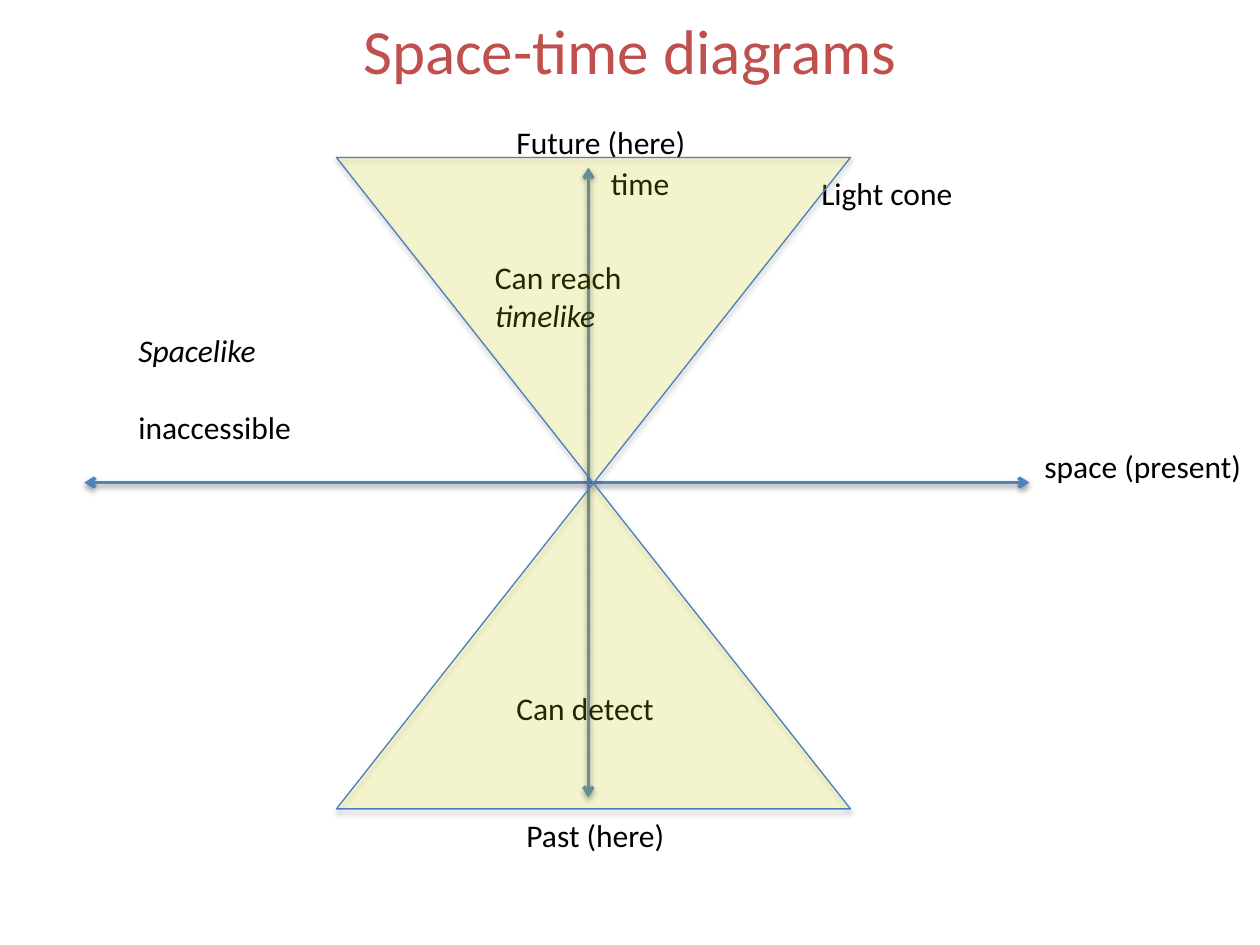
"""Build a slide showing a light cone on space and time axes."""
from lxml.etree import SubElement as Sub
from pptx import Presentation
from pptx.dml.color import RGBColor
from pptx.enum.shapes import MSO_CONNECTOR as Conn, MSO_SHAPE as Shape
from pptx.enum.text import MSO_ANCHOR as Anchor, PP_ALIGN as Align
from pptx.oxml.ns import qn
from pptx.util import Inches, Pt

RED = RGBColor(0xC0, 0x50, 0x4D)
BLUE = RGBColor(0x4F, 0x81, 0xBD)
EDGE = RGBColor(0x4B, 0x7E, 0xBC)
YELLOW = RGBColor(0xFF, 0xFF, 0x00)
BLACK = RGBColor(0x00, 0x00, 0x00)

deck = Presentation()
deck.slide_width, deck.slide_height = Inches(10), Inches(7.5)
slide = deck.slides.add_slide(deck.slide_layouts[6])


def add_text(box, lines, size=18, color=BLACK):
    left, top, width, height = box
    frame = slide.shapes.add_textbox(
        Inches(left), Inches(top), Inches(width), Inches(height)).text_frame
    frame.word_wrap = True
    for i, (text, slant, gap) in enumerate(lines):
        para = frame.paragraphs[0] if i == 0 else frame.add_paragraph()
        para.space_before = Pt(gap)
        run = para.add_run()
        run.text = text
        font = run.font
        font.name, font.size, font.italic = "Calibri", Pt(size), slant
        font.color.rgb = color
    return frame


def add_shadow(shape, alpha, dist):
    effects = Sub(shape._element.spPr, qn("a:effectLst"))
    shadow = Sub(effects, qn("a:outerShdw"), blurRad=str(Pt(3.1)),
                 dist=str(Pt(dist)), dir="5400000", rotWithShape="0")
    tint = Sub(shadow, qn("a:srgbClr"), val=str(BLACK))
    Sub(tint, qn("a:alpha"), val=str(alpha * 1000))


title = add_text((0.5, 0.08, 9, 0.62),
                 [("Space-time diagrams", False, 0)], 36, RED)
title.vertical_anchor = Anchor.MIDDLE
title.paragraphs[0].alignment = Align.CENTER

for ends in [(0.67, 3.83, 8.17, 3.83), (4.67, 1.33, 4.67, 6.33)]:
    axis = slide.shapes.add_connector(
        Conn.STRAIGHT, *[Inches(n) for n in ends])
    axis.line.color.rgb = BLUE
    axis.line.width = Pt(2)
    stroke = axis.line._get_or_add_ln()
    for tag in ("a:headEnd", "a:tailEnd"):
        Sub(stroke, qn(tag), type="arrow")
    add_shadow(axis, 38, 1.6)

labels = [
    ((8.19, 3.5, 1.81, 0.4), [("space (present)", False, 0)]),
    ((4, 0.93, 2.25, 0.4), [("Future (here)", False, 0)]),
    ((4.75, 1.25, 2.08, 0.4), [("time", False, 0)]),
    ((4.08, 6.43, 1.33, 0.4), [("Past (here)", False, 0)]),
    ((6.42, 1.33, 1.67, 0.4), [("Light cone", False, 0)]),
    ((3.83, 2, 1.67, 0.71),
     [("Can reach", False, 0), ("timelike", True, 0)]),
    ((4, 5.42, 1.42, 0.4), [("Can detect", False, 0)]),
    ((1, 2.58, 1.75, 1.01),
     [("Spacelike", True, 0), ("inaccessible", False, 22)]),
]
for box, lines in labels:
    add_text(box, lines)

cone = slide.shapes.add_shape(
    Shape.FLOWCHART_COLLATE,
    Inches(2.67), Inches(1.25), Inches(4.08), Inches(5.17))
cone.fill.solid()
cone.fill.fore_color.rgb = YELLOW
tint = cone._element.spPr.find(qn("a:solidFill")).find(qn("a:srgbClr"))
Sub(tint, qn("a:alpha"), val="15000")
cone.line.color.rgb = EDGE
cone.line.width = Pt(0.75)
add_shadow(cone, 35, 1.8)

deck.save("out.pptx")
